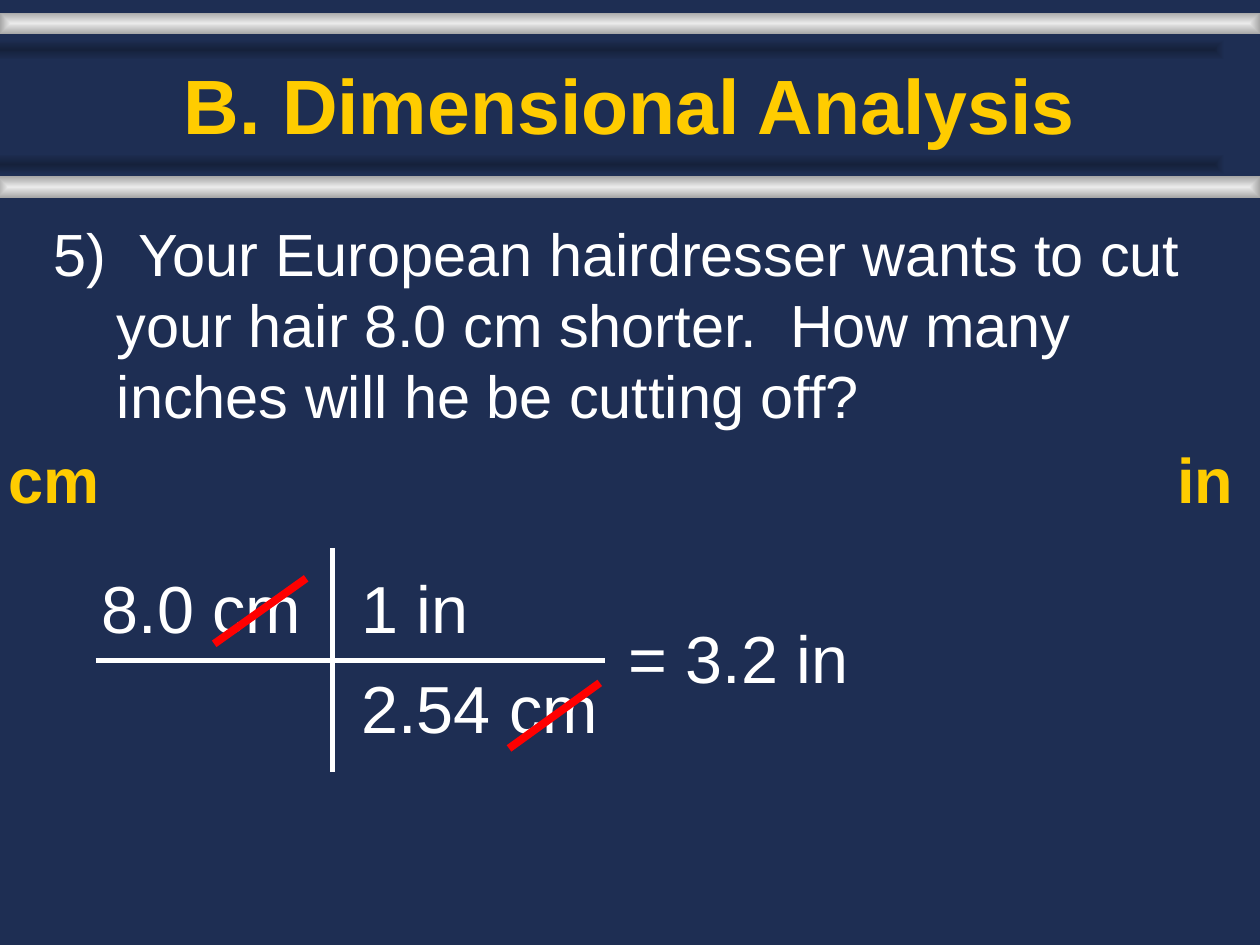
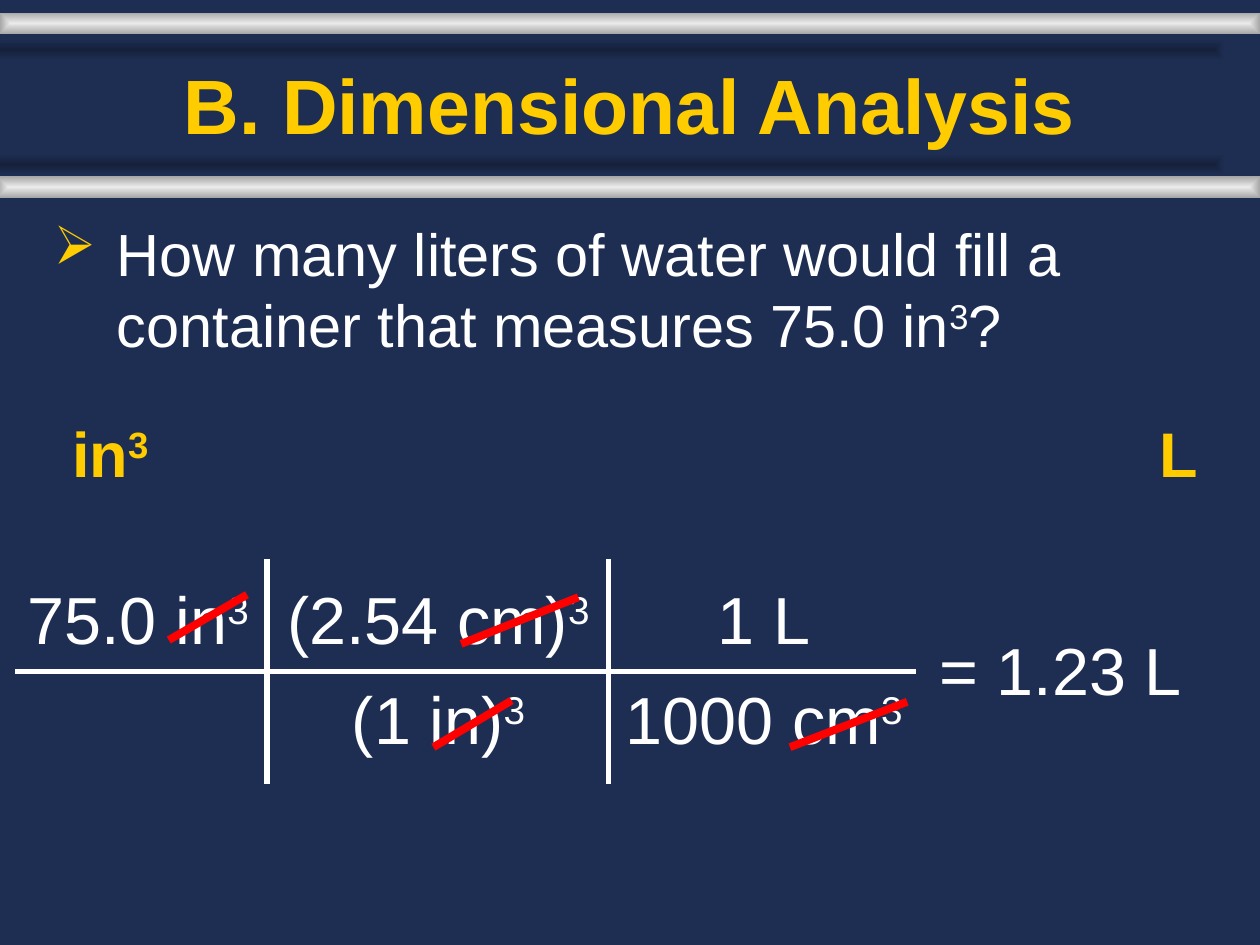
from lxml.etree import SubElement
from pptx import Presentation
from pptx.dml.color import RGBColor
from pptx.enum.shapes import MSO_CONNECTOR, MSO_SHAPE
from pptx.enum.text import MSO_ANCHOR, PP_ALIGN
from pptx.oxml.ns import qn
from pptx.util import Inches, Pt

# Content: "^" raises the character that follows it
TITLE = "B. Dimensional Analysis"
PROBLEMS = [
    {
        "question": "5)  Your European hairdresser wants to cut your hair 8.0 cm shorter."
                    "  How many inches will he be cutting off?",
        "bullet": None,
        "units": [("cm", -0.03, 0.92), ("in", 9.24, 0.65)],
        "units_top": 3.45,
        "axis": 5.24,
        "fraction_bar": (0.76, 4.8),
        "dividers": [2.64],
        "factors": [  # lines, left, width, alignment
            (["8.0 cm"], 0.71, 1.79, PP_ALIGN.LEFT),
            (["1 in", "2.54 cm"], 2.77, 2.29, PP_ALIGN.LEFT),
        ],
        "result": ("= 3.2 in", 4.89, 2.43),
        "strikes": [  # left, top from the axis, width, height
            (1.7, -0.65, 0.73, 0.52), (4.04, 0.18, 0.72, 0.52),
        ],
    },
    {
        "question": "How many liters of water would fill a container that measures 75.0 in^3?",
        "bullet": "➢",
        "units": [("in^3", 0.46, 0.83), ("L", 9.1, 0.51)],
        "units_top": 3.24,
        "axis": 5.33,
        "fraction_bar": (0.12, 7.27),
        "dividers": [2.12, 4.83],
        "factors": [
            (["75.0 in^3"], 0.12, 2.11, PP_ALIGN.LEFT),
            (["(2.54 cm)^3", "(1 in)^3"], 2.05, 2.86, PP_ALIGN.CENTER),
            (["1 L", "1000 cm^3"], 4.81, 2.51, PP_ALIGN.CENTER),
        ],
        "result": ("= 1.23 L", 7.36, 2.26),
        "strikes": [
            (1.34, -0.61, 0.62, 0.36), (3.44, 0.23, 0.62, 0.37),
            (3.66, -0.59, 0.93, 0.37), (6.27, 0.24, 0.93, 0.36),
        ],
    },
]

# Shared style
WIDTH, HEIGHT = 10, 7.5
FONT = "Arial"
NAVY, DARK_NAVY = "1E2E53", "15213B"
SILVER, GRAY = "EAEAEA", "A7A7A7"
GOLD, WHITE, RED = "FFCC00", "FFFFFF", "FF0000"
BANDS = [  # left, top, width, centre colour, edge colour
    (0, 0.1, WIDTH, SILVER, GRAY),
    (-0.28, 0.31, WIDTH, DARK_NAVY, NAVY),
    (-0.02, 1.4, WIDTH + 0.02, SILVER, GRAY),
    (-0.3, 1.22, WIDTH + 0.02, DARK_NAVY, NAVY),
]
BAND_HEIGHT = 0.17
DIVIDER_REACH = 0.89
FACTOR_RISE, RESULT_RISE = 0.79, 0.39


def color(hex_string):
    return RGBColor.from_string(hex_string)


def add_text(slide, lines, left, top, width, height, size=38, fill=WHITE, bold=False,
             align=PP_ALIGN.LEFT, anchor=MSO_ANCHOR.TOP, wrap=True, gap=0,
             hanging=0, bullet=None):
    box = slide.shapes.add_textbox(Inches(left), Inches(top), Inches(width), Inches(height))
    frame = box.text_frame
    frame.word_wrap = wrap
    frame.vertical_anchor = anchor
    for index, line in enumerate(lines):
        paragraph = frame.paragraphs[0] if index == 0 else frame.add_paragraph()
        paragraph.alignment = align
        if index:
            paragraph.space_before = Pt(gap)
        if hanging:
            set_hanging(paragraph, hanging, bullet)
        base, *raised_parts = line.split("^")
        pieces = [(base, False)]
        for part in raised_parts:
            pieces += [(part[0], True), (part[1:], False)]
        for text, raised in pieces:
            if not text:
                continue
            run = paragraph.add_run()
            run.text = text
            run.font.name, run.font.size, run.font.bold = FONT, Pt(size), bold
            run.font.color.rgb = color(fill)
            if raised:
                run.font._element.set("baseline", "30000")


def set_hanging(paragraph, indent, bullet):
    properties = paragraph._p.get_or_add_pPr()
    properties.set("marL", str(Inches(indent)))
    properties.set("indent", str(-Inches(indent)))
    if bullet:
        bullet_color = SubElement(properties, qn("a:buClr"))
        SubElement(bullet_color, qn("a:srgbClr"), val=GOLD)
        SubElement(properties, qn("a:buSzPct"), val="90000")
        SubElement(properties, qn("a:buChar"), char=bullet)


def add_line(slide, start, end, fill=WHITE, weight=3):
    line = slide.shapes.add_connector(
        MSO_CONNECTOR.STRAIGHT, *(Inches(value) for value in (*start, *end)))
    line.line.color.rgb = color(fill)
    line.line.width = Pt(weight)
    SubElement(line._element.spPr, qn("a:effectLst"))


def add_band(slide, left, top, width, centre, edge):
    band = slide.shapes.add_shape(MSO_SHAPE.RECTANGLE, Inches(left), Inches(top),
                                  Inches(width), Inches(BAND_HEIGHT))
    band.shadow.inherit = False
    band.line.fill.background()
    band.fill.gradient()
    for stop, hex_string in zip(band.fill.gradient_stops, (centre, edge)):
        stop.color.rgb = color(hex_string)
    # Turn the linear gradient into one that spreads from the centre
    gradient = band._element.spPr.find(qn("a:gradFill"))
    gradient.remove(gradient.find(qn("a:lin")))
    spread = SubElement(gradient, qn("a:path"), {"path": "shape"})
    SubElement(spread, qn("a:fillToRect"), dict.fromkeys("ltrb", "50000"))


def add_frame(slide):
    slide.background.fill.solid()
    slide.background.fill.fore_color.rgb = color(NAVY)
    for band in BANDS:
        add_band(slide, *band)
    add_text(slide, [TITLE], 0.75, 0.32, 8.5, 0.92, size=44, fill=GOLD, bold=True,
             align=PP_ALIGN.CENTER, anchor=MSO_ANCHOR.BOTTOM)


def add_problem(slide, problem):
    axis = problem["axis"]
    add_text(slide, [problem["question"]], 0.33, 1.67, 9.33, 1.54, size=34,
             hanging=0.5, bullet=problem["bullet"])
    for unit, left, width in problem["units"]:
        add_text(slide, [unit], left, problem["units_top"], width, 0.7, size=36,
                 fill=GOLD, bold=True, align=PP_ALIGN.CENTER, wrap=False)

    # Conversion grid
    bar_start, bar_end = problem["fraction_bar"]
    add_line(slide, (bar_start, axis), (bar_end, axis))
    for x in problem["dividers"]:
        add_line(slide, (x, axis - DIVIDER_REACH), (x, axis + DIVIDER_REACH))
    for lines, left, width, align in problem["factors"]:
        add_text(slide, lines, left, axis - FACTOR_RISE, width, 0.88 * len(lines),
                 align=align, gap=11.4)
    result, left, width = problem["result"]
    add_text(slide, [result], left, axis - RESULT_RISE, width, 0.79)

    # Cancelled units
    for left, offset, width, height in problem["strikes"]:
        top = axis + offset
        add_line(slide, (left + width, top), (left, top + height), fill=RED, weight=4.5)


def main():
    presentation = Presentation()
    presentation.slide_width, presentation.slide_height = Inches(WIDTH), Inches(HEIGHT)
    for problem in PROBLEMS:
        slide = presentation.slides.add_slide(presentation.slide_layouts[6])
        add_frame(slide)
        add_problem(slide, problem)
    presentation.save("out.pptx")


if __name__ == "__main__":
    main()
